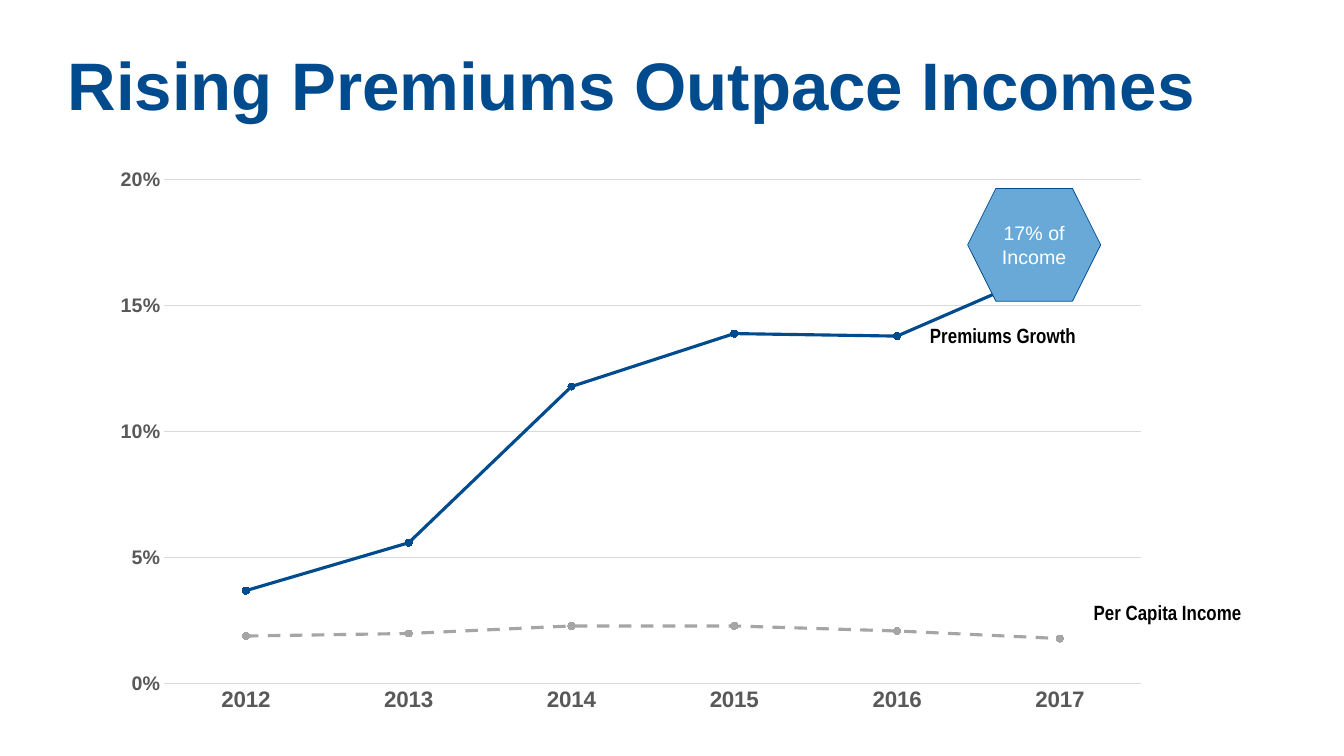
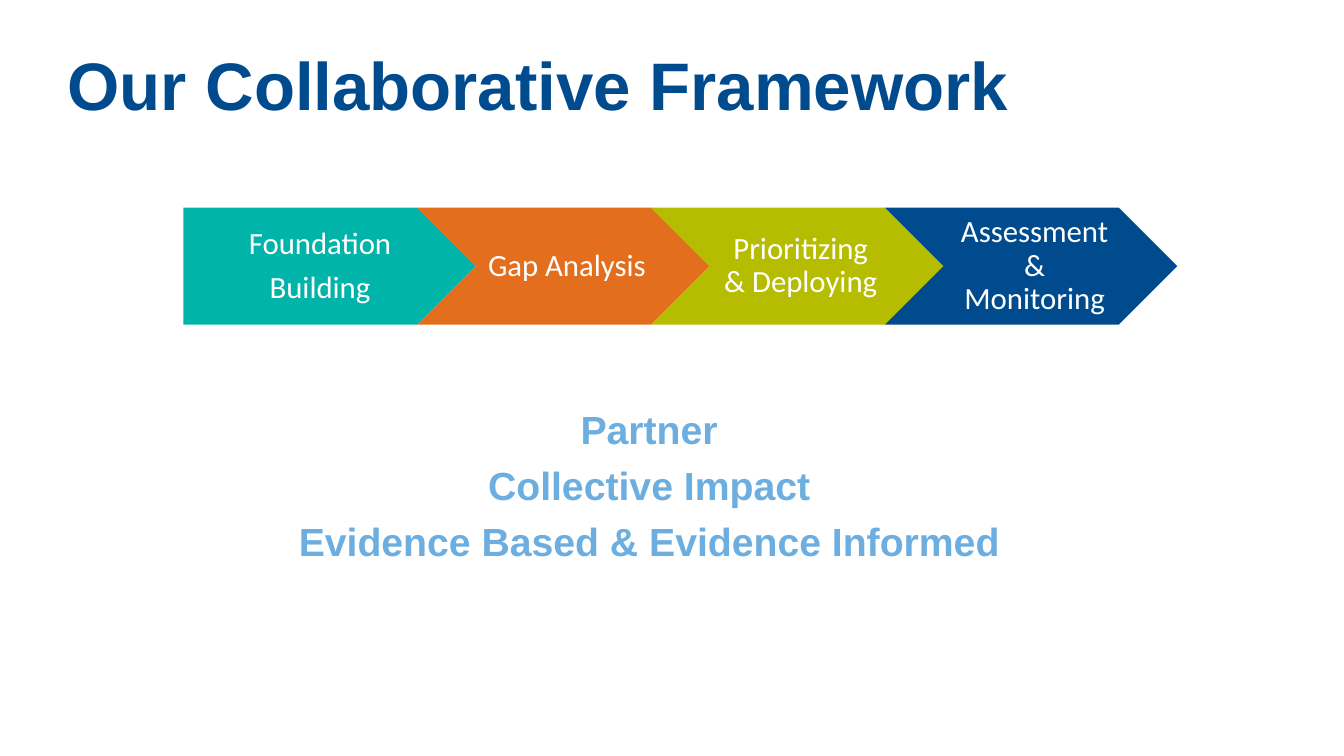
from dataclasses import dataclass

from lxml.etree import SubElement
from pptx import Presentation
from pptx.chart.data import CategoryChartData
from pptx.dml.color import RGBColor
from pptx.enum.chart import XL_CHART_TYPE, XL_MARKER_STYLE, XL_TICK_MARK
from pptx.enum.dml import MSO_LINE
from pptx.enum.shapes import MSO_SHAPE
from pptx.enum.text import MSO_ANCHOR, MSO_AUTO_SIZE, PP_ALIGN
from pptx.oxml.ns import qn
from pptx.util import Inches, Pt

WIDE, HIGH = Inches(13.33), Inches(7.5)
HUES = {
    "navy": "004B8D", "sky": "68A9D8", "pale": "6CAEDF", "teal": "00B4A9",
    "orange": "E36E1E", "lime": "B6BC00", "gray": "A5A5A5", "slate": "595959",
    "rule": "D9D9D9", "black": "000000", "white": "FFFFFF",
}


@dataclass(frozen=True)
class Box:
    """A place on the slide, in percent of its width and height."""
    x: float
    y: float
    w: float
    h: float

    def spots(self) -> tuple[int, int, int, int]:
        return (int(WIDE * self.x / 100), int(HIGH * self.y / 100),
                int(WIDE * self.w / 100), int(HIGH * self.h / 100))


@dataclass(frozen=True)
class Type:
    """How a block of text looks."""
    size: float
    hue: str
    face: str = "Arial"
    bold: bool = False
    align: PP_ALIGN = PP_ALIGN.CENTER
    lead: float = 1.0
    before: float = 0
    after: float = 0


@dataclass(frozen=True)
class Line:
    name: str
    hue: str
    vals: tuple[float, ...]
    dash: MSO_LINE | None = None


@dataclass(frozen=True)
class Step:
    text: str
    hue: str


@dataclass(frozen=True)
class Tag:
    text: str
    box: Box
    align: PP_ALIGN


HEAD = Type(48, "navy", bold=True, align=PP_ALIGN.LEFT, lead=0.9)
STEP = Type(22, "white", "Calibri", lead=0.9, after=7.7)
GOAL = Type(28, "pale", bold=True, lead=0.9, before=10)
NOTE = Type(14, "white")

HEAD_BOX = Box(5.03, 6.93, 90, 13.87)
PLOT_BOX = Box(7.5, 20.8, 79, 74.93)
INNER = {"x": 0.06, "y": 0.04, "w": 0.92, "h": 0.89}
HEX_BOX = Box(72, 24.93, 9.9, 14.93)
FLOW_BOX = Box(13.65, 27.47, 21.75, 15.47)
FLOW_STEP = 17.4
GOAL_BOX = Box(3.3, 54.27, 90, 40)

YEARS = [str(year) for year in range(2012, 2018)]
LINES = (
    Line("Per Capita Income", "gray",
         (0.019, 0.02, 0.023, 0.023, 0.021, 0.018), MSO_LINE.DASH),
    Line("Premiums Growth", "navy",
         (0.018, 0.036, 0.095, 0.116, 0.117, 0.148)),
)
TAGS = (
    Tag("Per Capita Income", Box(80.63, 78.67, 12.98, 4.67), PP_ALIGN.LEFT),
    Tag("Premiums Growth", Box(68.4, 42, 12.45, 4.67), PP_ALIGN.CENTER),
)
STEPS = (
    Step("Foundation\nBuilding", "teal"),
    Step("Gap Analysis", "orange"),
    Step("Prioritizing & Deploying", "lime"),
    Step("Assessment & Monitoring", "navy"),
)
GOALS = "Partner\nCollective Impact\nEvidence Based & Evidence Informed"


def tint(hue: str) -> RGBColor:
    return RGBColor.from_string(HUES[hue])


def paint(fill, hue: str) -> None:
    fill.solid()
    fill.fore_color.rgb = tint(hue)


def ink(font, size: float, hue: str, face: str, bold: bool) -> None:
    font.size, font.name, font.bold = Pt(size), face, bold
    font.color.rgb = tint(hue)


def write(frame, text: str, look: Type,
          pads: tuple[float, float, float, float] | None = None) -> None:
    """Set the text; pads are left, top, right and bottom in inches."""
    frame.text = text
    frame.word_wrap = True
    if pads is not None:
        (frame.margin_left, frame.margin_top,
         frame.margin_right, frame.margin_bottom) = map(Inches, pads)
    for spot, para in enumerate(frame.paragraphs):
        para.alignment, para.line_spacing = look.align, look.lead
        para.space_before = Pt(look.before if spot else 0)
        para.space_after = Pt(look.after)
        for run in para.runs:
            ink(run.font, look.size, look.hue, look.face, look.bold)


def start(deck, title: str):
    """Add a slide with its title."""
    slide = deck.slides.add_slide(deck.slide_layouts[5])
    head = slide.shapes.title
    head.left, head.top, head.width, head.height = HEAD_BOX.spots()
    frame = head.text_frame
    write(frame, title, HEAD, (0, 0, 0, 0))
    frame.auto_size = MSO_AUTO_SIZE.NONE
    frame.vertical_anchor = MSO_ANCHOR.TOP
    return slide


def block(slide, kind: MSO_SHAPE, box: Box, hue: str):
    """Add a flat filled shape without an outline."""
    shape = slide.shapes.add_shape(kind, *box.spots())
    shape.shadow.inherit = False
    paint(shape.fill, hue)
    shape.line.fill.background()
    shape.text_frame.vertical_anchor = MSO_ANCHOR.MIDDLE
    return shape


def pin(chart) -> None:
    """Fix the inner plot area as shares of the chart."""
    area = chart.plots[0]._element.getparent()
    frame = area.find(qn("c:layout"))
    if frame is None:
        frame = SubElement(area, qn("c:layout"))
        area.insert(0, frame)
    spot = SubElement(frame, qn("c:manualLayout"))
    rules = {"layoutTarget": "inner", "xMode": "edge", "yMode": "edge"}
    for key, val in (rules | INNER).items():
        SubElement(spot, qn(f"c:{key}")).set("val", str(val))


def trim(axis, size: float) -> None:
    axis.major_tick_mark = axis.minor_tick_mark = XL_TICK_MARK.NONE
    ink(axis.tick_labels.font, size, "slate", "Arial", True)


def rule(line) -> None:
    line.width = Pt(0.75)
    line.color.rgb = tint("rule")


def graph(slide) -> None:
    data = CategoryChartData(number_format="0%")
    data.categories = YEARS
    for line in LINES:
        data.add_series(line.name, line.vals)
    chart = slide.shapes.add_chart(
        XL_CHART_TYPE.LINE_MARKERS_STACKED, *PLOT_BOX.spots(), data).chart
    chart.has_title = chart.has_legend = False
    ink(chart.font, 10, "black", "Calibri", False)
    pin(chart)

    years, rates = chart.category_axis, chart.value_axis
    trim(years, 16)
    rule(years.format.line)
    trim(rates, 14)
    rates.format.line.fill.background()
    rates.minimum_scale, rates.maximum_scale = 0, 0.2
    rates.major_unit = 0.05
    rates.has_major_gridlines = True
    rule(rates.major_gridlines.format.line)
    rates.tick_labels.number_format = "0%"
    rates.tick_labels.number_format_is_linked = False

    plot = chart.plots[0]
    plot.vary_by_categories = False
    for part, line in zip(plot.series, LINES):
        part.smooth = False
        part.format.line.width = Pt(2.25)
        part.format.line.color.rgb = tint(line.hue)
        if line.dash:
            part.format.line.dash_style = line.dash
        part.marker.style, part.marker.size = XL_MARKER_STYLE.CIRCLE, 5
        paint(part.marker.format.fill, line.hue)
        part.marker.format.line.color.rgb = tint(line.hue)


def label(slide, tag: Tag) -> None:
    frame = slide.shapes.add_textbox(*tag.box.spots()).text_frame
    look = Type(14.7, "black", "Arial Narrow", True, tag.align)
    write(frame, tag.text, look)
    frame.word_wrap = False
    frame.auto_size = MSO_AUTO_SIZE.SHAPE_TO_FIT_TEXT


def costs(deck) -> None:
    slide = start(deck, "Rising Premiums Outpace Incomes")
    graph(slide)
    for tag in TAGS:
        label(slide, tag)
    badge = block(slide, MSO_SHAPE.HEXAGON, HEX_BOX, "sky")
    badge.line.color.rgb = tint("navy")
    badge.line.width = Pt(0.5)
    write(badge.text_frame, "17% of Income", NOTE)


def process(deck) -> None:
    slide = start(deck, "Our Collaborative Framework")
    for spot, step in enumerate(STEPS):
        kind = MSO_SHAPE.CHEVRON if spot else MSO_SHAPE.PENTAGON
        box = Box(FLOW_BOX.x + spot * FLOW_STEP, FLOW_BOX.y,
                  FLOW_BOX.w, FLOW_BOX.h)
        shape = block(slide, kind, box, step.hue)
        left = 0.1 if spot else 0.13
        write(shape.text_frame, step.text, STEP, (left, 0.06, 0.03, 0.06))
    goals = slide.shapes.add_textbox(*GOAL_BOX.spots())
    write(goals.text_frame, GOALS, GOAL, (0, 0, 0, 0))


def main() -> None:
    deck = Presentation()
    deck.slide_width, deck.slide_height = WIDE, HIGH
    costs(deck)
    process(deck)
    deck.save("out.pptx")


if __name__ == "__main__":
    main()
